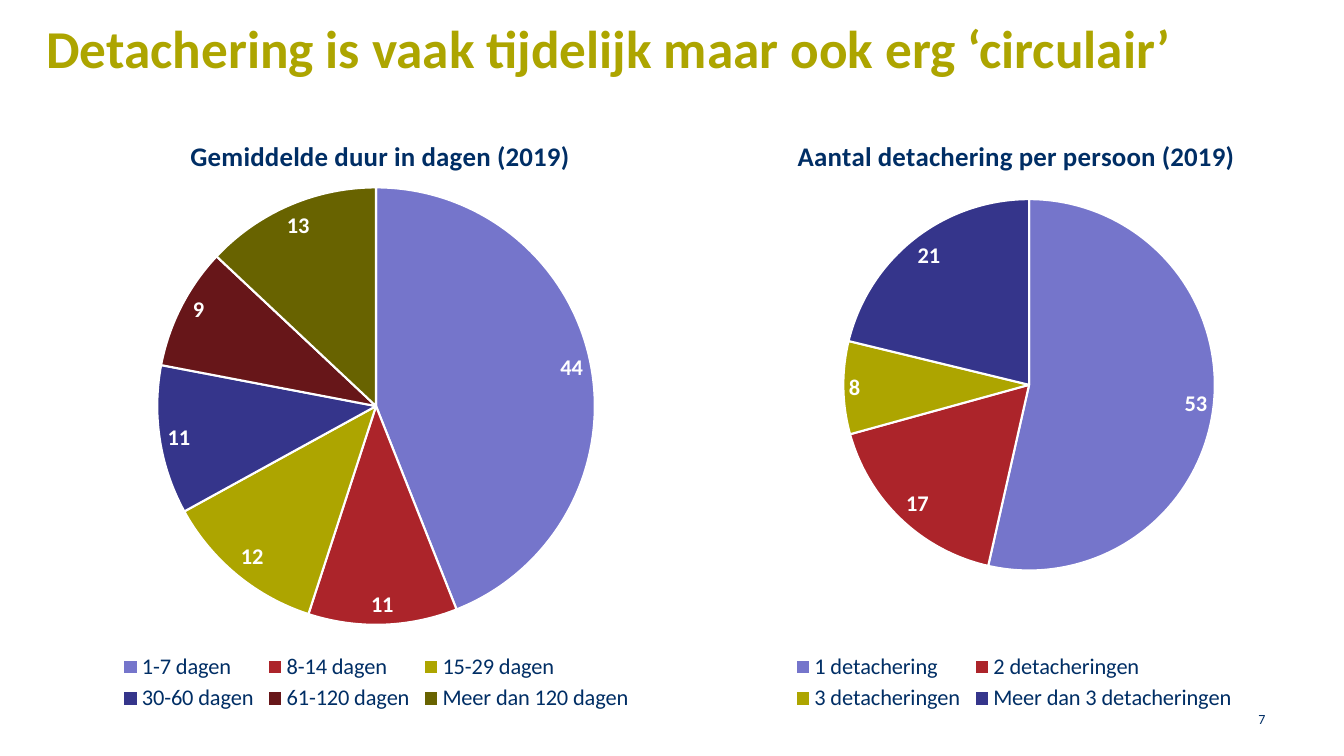
"""Build a slide with two pie charts on the duration and number of secondments."""
import pptx
import pptx.chart.data
import pptx.dml.color
import pptx.enum.chart
import pptx.enum.text
import pptx.oxml
import pptx.oxml.ns
import pptx.util

Inches = pptx.util.Inches
NAVY, OLIVE, WHITE = "002E65", "ADA500", "FFFFFF"
SLICE_COLOURS = ["7575CB", "AC242A", OLIVE, "35358B", "671619", "686300"]


def colour(hex_string):
    return pptx.dml.color.RGBColor.from_string(hex_string)


def format_font(font, size, color, bold=False):
    font.name = "Calibri"
    font.size = pptx.util.Pt(size)
    font.bold = bold
    font.color.rgb = colour(color)


def write_text(frame, text, size, color=NAVY, bold=False, align=None):
    paragraph = frame.paragraphs[0]
    paragraph.alignment = align
    run = paragraph.add_run()
    run.text = text
    format_font(run.font, size, color, bold)


def set_layout(element, index, target=None, **fractions):
    for old in element.findall(pptx.oxml.ns.qn("c:layout")):
        element.remove(old)
    parts = f'<c:layoutTarget val="{target}"/>' if target else ""
    parts += "".join(f'<c:{axis}Mode val="edge"/>' for axis in "xy")
    parts += "".join(f'<c:{key} val="{value}"/>' for key, value in fractions.items())
    element.insert(index, pptx.oxml.parse_xml(
        f'<c:layout {pptx.oxml.ns.nsdecls("c")}>'
        f"<c:manualLayout>{parts}</c:manualLayout></c:layout>"))


class SlideBuilder:
    def __init__(self, presentation):
        self.slide = presentation.slides.add_slide(presentation.slide_layouts[5])

    def title(self, text, left, top, width, height):
        shape = self.slide.shapes.title
        shape.left, shape.top = Inches(left), Inches(top)
        shape.width, shape.height = Inches(width), Inches(height)
        frame = shape.text_frame
        frame.margin_left = frame.margin_right = 0
        frame.margin_top = frame.margin_bottom = 0
        frame.word_wrap = True
        frame.auto_size = pptx.enum.text.MSO_AUTO_SIZE.NONE
        frame.vertical_anchor = pptx.enum.text.MSO_ANCHOR.TOP
        write_text(frame, text, 38, OLIVE, True, pptx.enum.text.PP_ALIGN.LEFT)

    def page_number(self, text, left, top, width, height):
        box = self.slide.shapes.add_textbox(
            Inches(left), Inches(top), Inches(width), Inches(height))
        frame = box.text_frame
        frame.word_wrap = True
        frame.vertical_anchor = pptx.enum.text.MSO_ANCHOR.MIDDLE
        write_text(frame, text, 10, align=pptx.enum.text.PP_ALIGN.RIGHT)

    def pie(self, title, values, left, width, title_x, plot_area):
        data = pptx.chart.data.CategoryChartData(number_format="#,##0")
        data.categories = list(values)
        data.add_series("Series 1", list(values.values()))
        chart = self.slide.shapes.add_chart(
            pptx.enum.chart.XL_CHART_TYPE.PIE, Inches(left), Inches(1.07),
            Inches(width), Inches(6.04), data).chart
        format_font(chart.font, 16, NAVY)
        chart.has_title = True
        write_text(chart.chart_title.text_frame, title, 19.2, bold=True)
        set_layout(chart.chart_title._element, 1, x=title_x, y=0.04)
        x, y, w, h = plot_area
        set_layout(chart._chartSpace.chart.plotArea, 0, "inner", x=x, y=y, w=w, h=h)

        chart.has_legend = True
        chart.legend.position = pptx.enum.chart.XL_LEGEND_POSITION.BOTTOM
        chart.legend.include_in_layout = False
        format_font(chart.legend.font, 16, NAVY)

        plot = chart.plots[0]
        plot.vary_by_categories = True
        series = plot.series[0]
        for index, hex_string in zip(range(len(values)), SLICE_COLOURS):
            slice_format = series.points[index].format
            slice_format.fill.solid()
            slice_format.fill.fore_color.rgb = colour(hex_string)
            slice_format.line.color.rgb = colour(WHITE)
            slice_format.line.width = pptx.util.Pt(1.5)
        labels = series.data_labels
        labels.show_value = True
        labels.number_format = "#,##0"
        labels.number_format_is_linked = False
        labels.position = pptx.enum.chart.XL_LABEL_POSITION.BEST_FIT
        format_font(labels.font, 16, WHITE, True)


def main():
    presentation = pptx.Presentation()
    presentation.slide_width = Inches(13.33)
    presentation.slide_height = Inches(7.5)
    builder = SlideBuilder(presentation)
    builder.page_number("7", 9.76, 6.93, 2.89, 0.4)
    builder.title("Detachering is vaak tijdelijk maar ook erg ‘circulair’",
                  0.46, 0.15, 12.19, 2.19)
    builder.pie("Gemiddelde duur in dagen (2019)",
                {"1-7 dagen": 44, "8-14 dagen": 11, "15-29 dagen": 12,
                 "30-60 dagen": 11, "61-120 dagen": 9, "Meer dan 120 dagen": 13},
                0.23, 7, 0.23, (0.19, 0.13, 0.62, 0.72))
    builder.pie("Aantal detachering per persoon (2019)",
                {"1 detachering": 53, "2 detacheringen": 17,
                 "3 detacheringen": 8, "Meer dan 3 detacheringen": 21},
                7.01, 6.09, 0.14, (0.22, 0.15, 0.61, 0.61))
    presentation.save("out.pptx")


if __name__ == "__main__":
    main()
